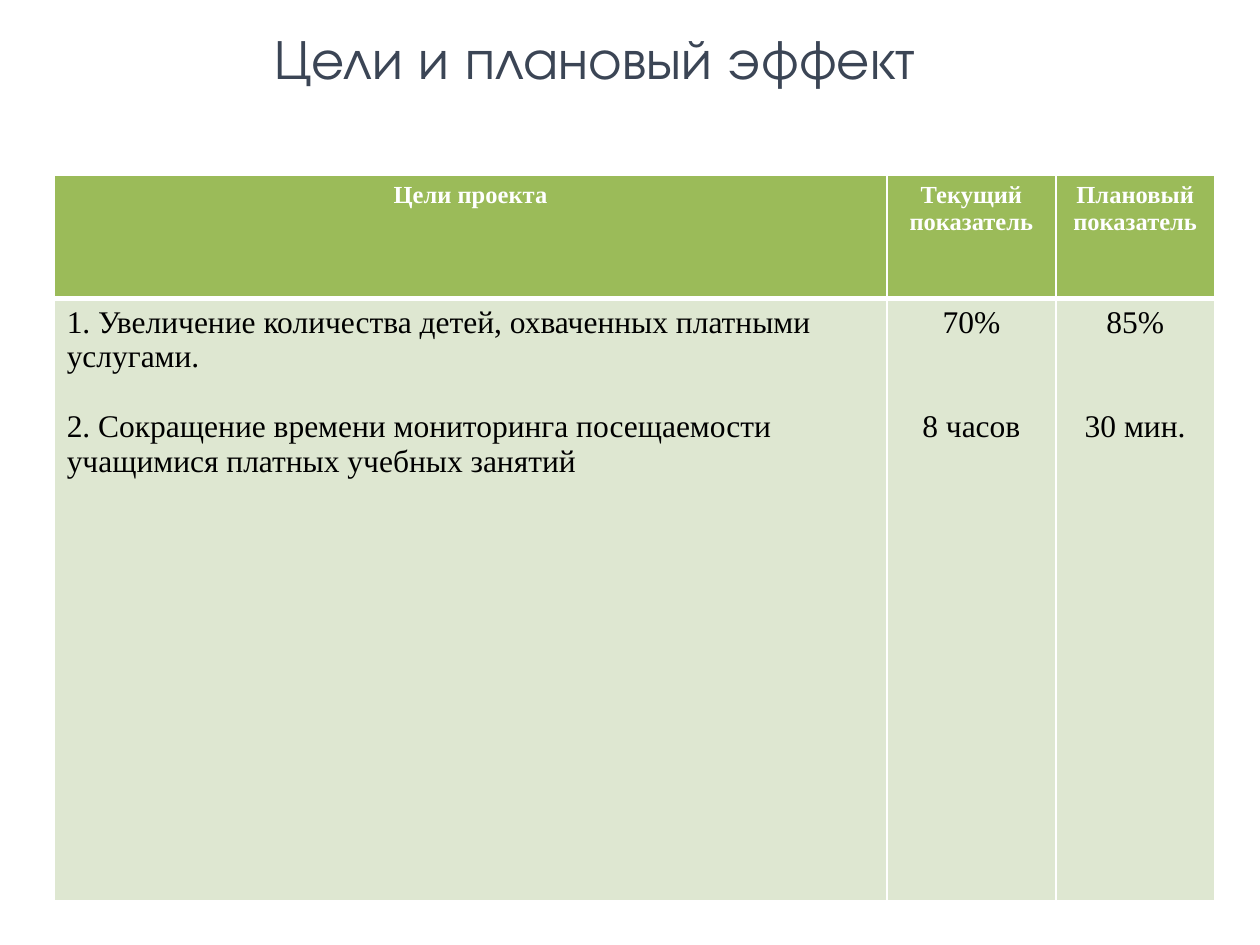
"""Build the slide with project goals and their planned effect."""
import pptx
import pptx.dml.color
import pptx.enum.text
import pptx.oxml
import pptx.oxml.ns
import pptx.util
from pptx.util import Inches

COLORS = {
    "title": "3B4555",
    "header": "9BBB59",
    "body": "DEE7D1",
    "white": "FFFFFF",
    "black": "000000",
}
TITLE_FONT = "TeX Gyre Adventor"
TABLE_FONT = "Times New Roman"
CENTER = pptx.enum.text.PP_ALIGN.CENTER
LEFT = pptx.enum.text.PP_ALIGN.LEFT

COLUMN_WIDTHS = [6.61, 1.34, 1.26]
ROW_HEIGHTS = [0.98, 4.78]
HEADERS = ["Цели проекта", "Текущий показатель", "Плановый показатель"]
GOALS = [
    "1. Увеличение количества детей, охваченных платными услугами.",
    "2. Сокращение времени мониторинга посещаемости учащимися платных учебных занятий",
]
CURRENT_VALUES = ["70%", "8 часов"]
PLANNED_VALUES = ["85%", "30 мин."]
LINE_HEIGHT = 19.9


class SlideBuilder:
    def __init__(self, presentation):
        self.slide = presentation.slides.add_slide(presentation.slide_layouts[5])
        fill = self.slide.background.fill
        fill.solid()
        fill.fore_color.rgb = self.color("white")

    def color(self, name):
        return pptx.dml.color.RGBColor.from_string(COLORS[name])

    def add_text(self, paragraph, text, font_name, size, color, alignment, bold=False):
        paragraph.alignment = alignment
        run = paragraph.add_run()
        run.text = text
        run.font.name = font_name
        run.font.size = pptx.util.Pt(size)
        run.font.bold = bold
        run.font.color.rgb = self.color(color)

    def title(self, text, left, top, width, height):
        shape = self.slide.shapes.title
        shape.left, shape.top = Inches(left), Inches(top)
        shape.width, shape.height = Inches(width), Inches(height)
        frame = shape.text_frame
        frame.word_wrap = False
        frame.vertical_anchor = pptx.enum.text.MSO_ANCHOR.MIDDLE
        self.add_text(frame.paragraphs[0], text, TITLE_FONT, 32, "title", CENTER)

    def table(self, left, top):
        shape = self.slide.shapes.add_table(
            len(ROW_HEIGHTS), len(COLUMN_WIDTHS), Inches(left), Inches(top),
            Inches(sum(COLUMN_WIDTHS)), Inches(sum(ROW_HEIGHTS)))
        for column, width in zip(shape.table.columns, COLUMN_WIDTHS):
            column.width = Inches(width)
        for row, height in zip(shape.table.rows, ROW_HEIGHTS):
            row.height = Inches(height)
        return shape.table

    def borders(self, cell, top, bottom):
        properties = cell._tc.get_or_add_tcPr()
        widths = {"lnL": 1, "lnR": 1, "lnT": top, "lnB": bottom}
        for position, (tag, width) in enumerate(widths.items()):
            line = pptx.oxml.parse_xml(
                f'<a:{tag} {pptx.oxml.ns.nsdecls("a")} w="{pptx.util.Pt(width)}">'
                f'<a:solidFill><a:srgbClr val="{COLORS["white"]}"/></a:solidFill>'
                f'</a:{tag}>')
            properties.insert(position, line)

    def fill_cell(self, cell, color):
        cell.fill.solid()
        cell.fill.fore_color.rgb = self.color(color)

    def header_cell(self, cell, text):
        self.fill_cell(cell, "header")
        self.borders(cell, 1, 3)
        self.add_text(cell.text_frame.paragraphs[0], text, TABLE_FONT, 14,
                      "white", CENTER, True)

    def body_cell(self, cell, texts, alignment, gap_lines):
        self.fill_cell(cell, "body")
        self.borders(cell, 3, 1)
        frame = cell.text_frame
        for index, text in enumerate(texts):
            paragraph = frame.add_paragraph() if index else frame.paragraphs[0]
            if index:
                paragraph.space_before = pptx.util.Pt(gap_lines * LINE_HEIGHT)
            self.add_text(paragraph, text, TABLE_FONT, 18, "black", alignment)


def main():
    presentation = pptx.Presentation()
    presentation.slide_width = Inches(10)
    presentation.slide_height = Inches(7.5)
    builder = SlideBuilder(presentation)
    builder.title("Цели и плановый эффект", 1.93, 0.13, 5.59, 0.64)
    table = builder.table(0.43, 1.39)
    for column, text in enumerate(HEADERS):
        builder.header_cell(table.cell(0, column), text)
    builder.body_cell(table.cell(1, 0), GOALS, LEFT, 1)
    for column, values in enumerate([CURRENT_VALUES, PLANNED_VALUES], start=1):
        builder.body_cell(table.cell(1, column), values, CENTER, 2)
    presentation.save("out.pptx")


if __name__ == "__main__":
    main()
